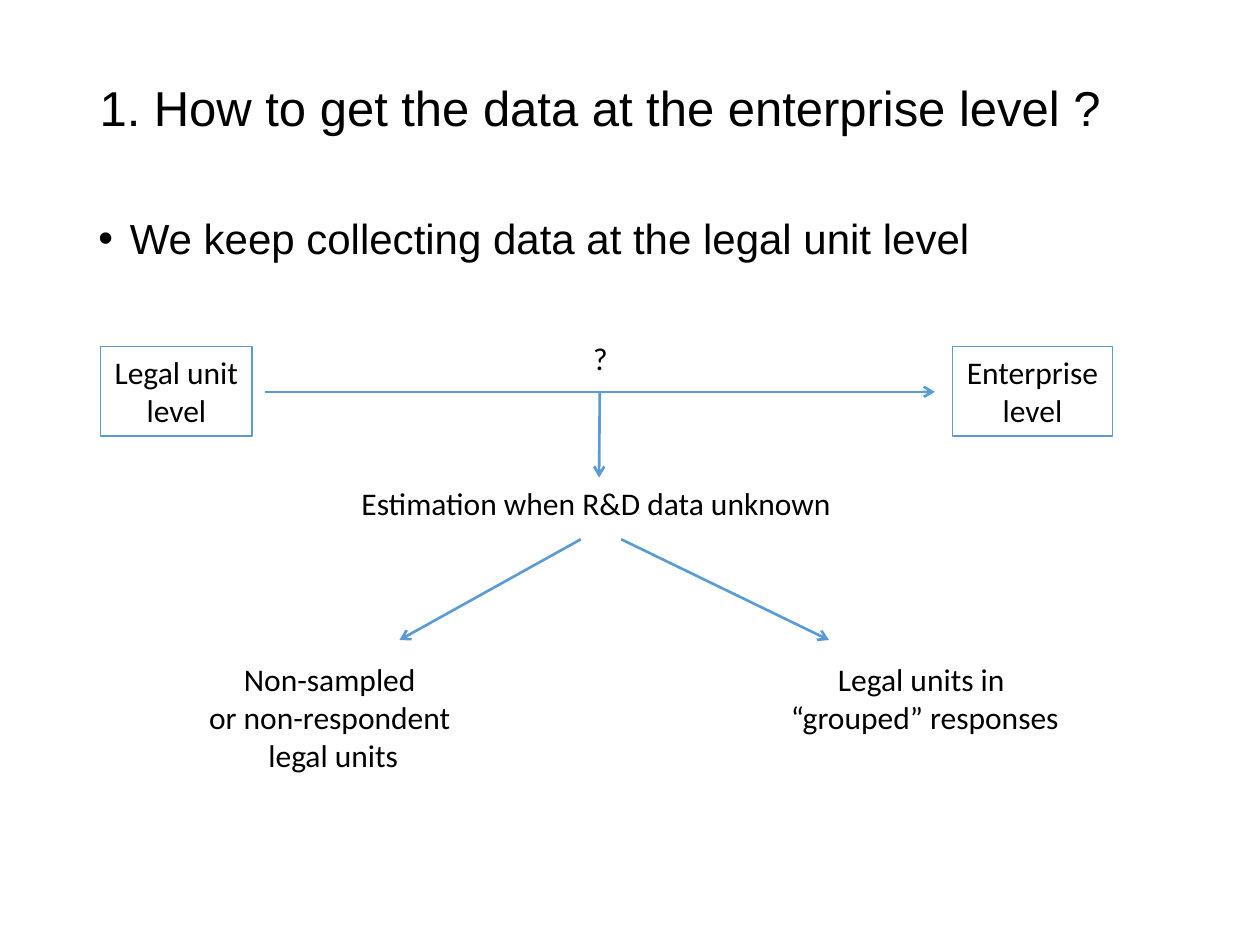
from lxml import etree
from pptx import Presentation, util as u
from pptx.dml.color import RGBColor
from pptx.enum import shapes, text
from pptx.oxml import ns

BLACK = RGBColor(0x00, 0x00, 0x00)
BLUE = RGBColor(0x5B, 0x9B, 0xD5)

TITLE_FONT = {"name": "Arial", "size": u.Pt(28), "bold": False}
BODY_FONT = {"name": "Arial", "size": u.Pt(24)}
LABEL_FONT = {"name": "Calibri", "size": u.Pt(18)}

BOX_TOP, BOX_HEIGHT = 2.75, 0.71
AXIS_Y = 3.11
FORK_TOP, FORK_BOTTOM = 4.28, 5.08
OUTCOME_TOP = 5.19


def place(shape, left, top, width, height):
    lengths = {"left": left, "top": top, "width": width, "height": height}
    for name, value in lengths.items():
        setattr(shape, name, u.Inches(value))


def format_paragraph(paragraph, font, alignment):
    paragraph.alignment = alignment
    paragraph.space_before = u.Pt(0)
    for name, value in font.items():
        setattr(paragraph.font, name, value)
    paragraph.font.color.rgb = BLACK


def add_bullet(paragraph):
    properties = paragraph._p.get_or_add_pPr()
    properties.set("marL", str(u.Inches(0.25)))
    properties.set("indent", str(u.Inches(-0.25)))
    etree.SubElement(properties, ns.qn("a:buFont")).set("typeface", "Arial")
    etree.SubElement(properties, ns.qn("a:buChar")).set("char", "•")


def fill_placeholder(placeholder, position, wording, font, anchor, bullet=False):
    place(placeholder, *position)
    frame = placeholder.text_frame
    frame.text = wording
    frame.auto_size = text.MSO_AUTO_SIZE.NONE
    frame.vertical_anchor = anchor
    paragraph = frame.paragraphs[0]
    if bullet:
        add_bullet(paragraph)
    paragraph.line_spacing = 0.9
    format_paragraph(paragraph, font, text.PP_ALIGN.LEFT)


def write_label(shape, wording, wrap=True, alignment=text.PP_ALIGN.CENTER):
    frame = shape.text_frame
    frame.text = wording
    frame.word_wrap = wrap
    frame.auto_size = text.MSO_AUTO_SIZE.SHAPE_TO_FIT_TEXT
    for paragraph in frame.paragraphs:
        format_paragraph(paragraph, LABEL_FONT, alignment)


def add_level_box(slide, left, width, wording):
    box = slide.shapes.add_shape(
        shapes.MSO_SHAPE.RECTANGLE,
        *map(u.Inches, (left, BOX_TOP, width, BOX_HEIGHT)))
    box.shadow.inherit = False
    box.fill.background()
    box.line.color.rgb = BLUE
    box.line.width = u.Pt(0.75)
    write_label(box, wording)


def add_label(slide, position, wording, **options):
    label = slide.shapes.add_textbox(*map(u.Inches, position))
    write_label(label, wording, **options)
    return label


def add_arrow(slide, start, end):
    arrow = slide.shapes.add_connector(
        shapes.MSO_CONNECTOR.STRAIGHT, *map(u.Inches, start + end))
    arrow.line.color.rgb = BLUE
    arrow.line.width = u.Pt(1.5)
    etree.SubElement(arrow.line._get_or_add_ln(), ns.qn("a:tailEnd")).set("type", "arrow")
    etree.SubElement(arrow._element.spPr, ns.qn("a:effectLst"))
    return arrow


def main():
    presentation = Presentation()
    presentation.slide_width = u.Inches(10)
    presentation.slide_height = u.Inches(7.5)
    slide = presentation.slides.add_slide(presentation.slide_layouts[1])

    fill_placeholder(slide.shapes.title, (0.69, 0.4, 8.62, 0.95),
                     "1. How to get the data at the enterprise level ?",
                     TITLE_FONT, text.MSO_ANCHOR.MIDDLE)
    fill_placeholder(slide.placeholders[1], (0.68, 1.68, 8.62, 0.66),
                     "We keep collecting data at the legal unit level",
                     BODY_FONT, text.MSO_ANCHOR.TOP, bullet=True)

    add_level_box(slide, 0.8, 1.2, "Legal unit level")
    add_level_box(slide, 7.56, 1.27, "Enterprise level")
    add_arrow(slide, (2.1, AXIS_Y), (7.42, AXIS_Y))

    left_label = {"wrap": False, "alignment": text.PP_ALIGN.LEFT}
    add_label(slide, (4.61, 2.64, 0.32, 0.4), "?", **left_label)
    estimation = add_label(slide, (2.77, 3.79, 3.97, 0.4),
                           "Estimation when R&D data unknown", **left_label)
    add_label(slide, (1.4, OUTCOME_TOP, 2.49, 1.01),
              "Non-sampled \nor non-respondent \nlegal units")
    add_label(slide, (5.98, OUTCOME_TOP, 2.72, 0.71),
              "Legal units in \n“grouped” responses")

    estimation_arrow = add_arrow(slide, (4.76, AXIS_Y), (4.76, 3.79))
    estimation_arrow.end_connect(estimation, 0)
    for start_x, end_x in ((4.61, 3.17), (4.93, 6.58)):
        add_arrow(slide, (start_x, FORK_TOP), (end_x, FORK_BOTTOM))

    presentation.save("out.pptx")


if __name__ == "__main__":
    main()
